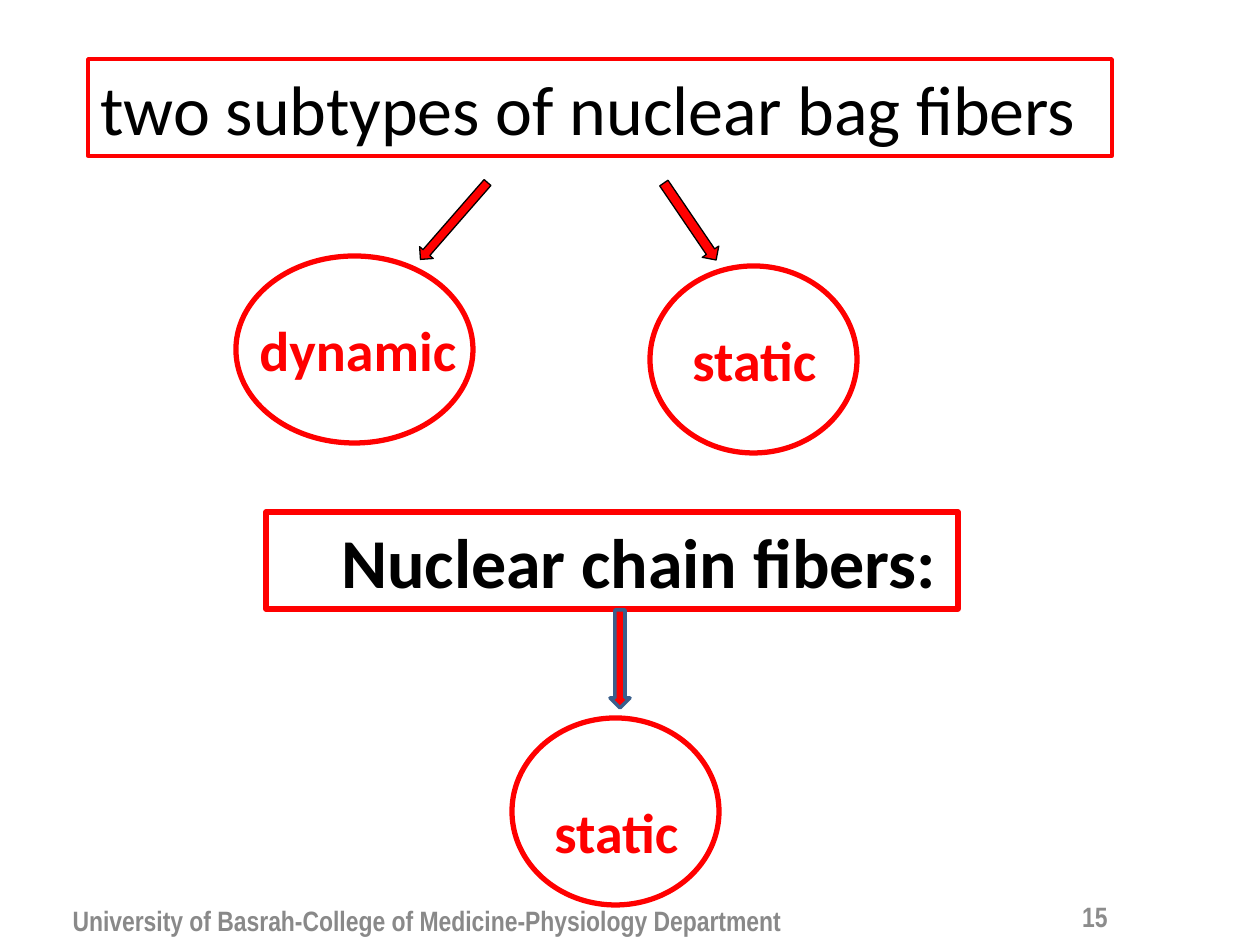
from pptx import Presentation
from pptx.dml.color import RGBColor
from pptx.enum.shapes import MSO_SHAPE
from pptx.enum.text import MSO_ANCHOR, PP_ALIGN
from pptx.util import Emu, Pt

EMU_PER_PX = 914400 / 126
COLORS = {
    "red": "FF0000",
    "black": "000000",
    "blue": "3A5F8C",
    "number": "8C8C8C",
    "footer": "898989",
}


def px(value):
    return Emu(round(value * EMU_PER_PX))


def rgb(name):
    return RGBColor.from_string(COLORS[name])


def write(sp, text, size=32, color="red", bold=True, font="Calibri",
          align=PP_ALIGN.CENTER, anchor=MSO_ANCHOR.TOP, spacing=None,
          wrap=True, indent=0):
    tf = sp.text_frame
    tf.word_wrap = wrap
    tf.vertical_anchor = anchor
    p = tf.paragraphs[0]
    p.alignment = align
    if spacing:
        p.line_spacing = spacing
    if indent:
        p._p.get_or_add_pPr().set("marL", str(px(indent)))
    r = p.add_run()
    r.text = text
    r.font.name = font
    r.font.size = Pt(size)
    r.font.bold = bold
    r.font.color.rgb = rgb(color)


def add_shape(s, kind, box, line, width, fill=None):
    sp = s.shapes.add_shape(kind, *map(px, box))
    sp.shadow.inherit = False
    if fill:
        sp.fill.solid()
        sp.fill.fore_color.rgb = rgb(fill)
    else:
        sp.fill.background()
    sp.line.color.rgb = rgb(line)
    sp.line.width = Pt(width)
    return sp


def add_heading(s, box, text, width, **fmt):
    sp = add_shape(s, MSO_SHAPE.RECTANGLE, box, "red", width)
    write(sp, text, size=40, color="black", align=PP_ALIGN.LEFT, **fmt)


def add_text(s, box, text, **fmt):
    write(s.shapes.add_textbox(*map(px, box)), text, **fmt)


def add_subtype(s, oval, label, text):
    add_shape(s, MSO_SHAPE.OVAL, oval, "red", 3)
    add_text(s, label, text, spacing=1.5, wrap=False)


def add_arrow(s, box, line="black", width=0.75, rotation=0):
    sp = add_shape(s, MSO_SHAPE.DOWN_ARROW, box, line, width, "red")
    sp.rotation = rotation


def add_footer(s, box, text, color, align):
    add_text(s, box, text, size=16, color=color, font="Arial Narrow",
             align=align, anchor=MSO_ANCHOR.MIDDLE)


def main():
    prs = Presentation()
    prs.slide_width, prs.slide_height = px(1260), px(945)
    s = prs.slides.add_slide(prs.slide_layouts[6])

    add_heading(s, (88, 59, 1024, 97), "two subtypes of nuclear bag fibers", 2,
                bold=False)
    add_subtype(s, (236, 256, 237, 187), (246, 276, 224, 104), "dynamic")
    add_subtype(s, (650, 266, 207, 187), (679, 286, 151, 104), "static")
    add_arrow(s, (680, 175, 20, 93), rotation=325.8)
    add_arrow(s, (445, 170, 18, 102), rotation=41.1)

    add_heading(s, (266, 512, 692, 97), "Nuclear chain fibers:", 3,
                wrap=False, indent=63)
    add_arrow(s, (610, 610, 20, 98), line="blue", width=2)
    add_subtype(s, (512, 718, 207, 187), (541, 758, 151, 104), "static")

    add_footer(s, (819, 891, 301, 50), "15", "number", PP_ALIGN.RIGHT)
    add_footer(s, (37, 895, 780, 50),
               "University of Basrah-College of Medicine-Physiology Department",
               "footer", PP_ALIGN.CENTER)
    prs.save("out.pptx")


if __name__ == "__main__":
    main()
